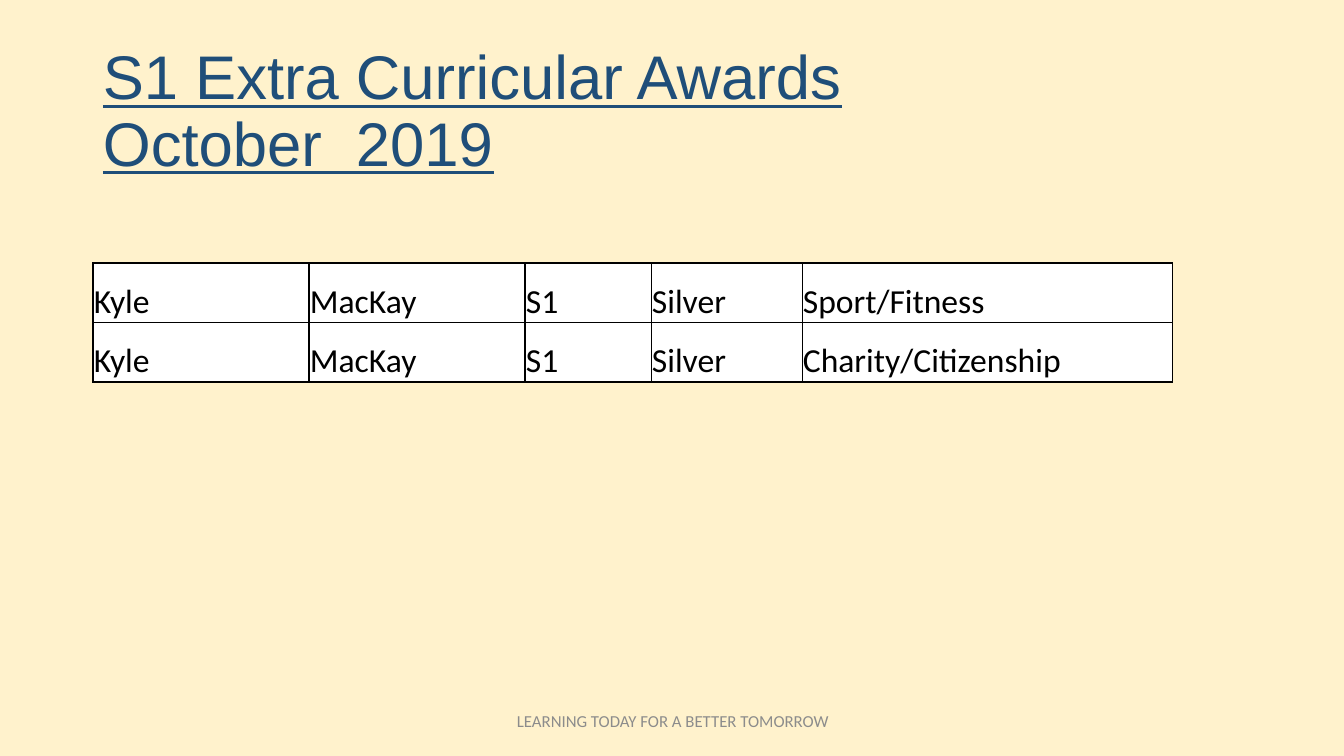
from lxml import etree
from pptx import Presentation, util as u
from pptx.dml.color import RGBColor
from pptx.enum import text
from pptx.oxml import ns

EMU_PER_PX = 914400 / 100.8
ANCHOR = text.MSO_ANCHOR


def px(n):
    """Turn pixels into EMU."""
    return u.Emu(round(n * EMU_PER_PX))


def rgb(value):
    """Turn a hex string into a colour."""
    return RGBColor.from_string(value)


class Deck:
    """Hold the style and the current slide."""

    TITLE = {"name": "Arial", "size": u.Pt(44), "color": "1F4E79", "underline": True}
    FOOTER = {"name": "Calibri", "size": u.Pt(12), "color": "8C8C8C"}
    CELL = {"name": "Calibri", "size": u.Pt(24), "color": "000000"}
    PAPER, BACKGROUND, BORDER = "FFFFFF", "FFF2CC", "000000"

    def __init__(self, width, height):
        """Start a deck with one blank slide."""
        self.prs = Presentation()
        self.prs.slide_width, self.prs.slide_height = px(width), px(height)
        self.s = self.prs.slides.add_slide(self.prs.slide_layouts[6])
        fill = self.s.background.fill
        fill.solid()
        fill.fore_color.rgb = rgb(self.BACKGROUND)

    def run(self, p, words, style):
        """Add a formatted run to a paragraph."""
        r = p.add_run()
        r.text = words
        for key, value in style.items():
            if key == "color":
                r.font.color.rgb = rgb(value)
            else:
                setattr(r.font, key, value)

    def text(self, box, lines, style, **layout):
        """Add a text box with one paragraph of broken lines."""
        tf = self.s.shapes.add_textbox(*map(px, box)).text_frame
        tf.word_wrap, tf.vertical_anchor = True, ANCHOR.MIDDLE
        p = tf.paragraphs[0]
        for key, value in layout.items():
            setattr(p, key, value)
        for i, line in enumerate(lines):
            if i:
                p.add_line_break()
            self.run(p, line, style)

    def border(self, cell):
        """Draw a thin line on each side of a cell."""
        tc_pr = cell._tc.get_or_add_tcPr()
        for side in "LRTB":
            ln = etree.SubElement(tc_pr, ns.qn(f"a:ln{side}"), w=str(u.Pt(1)))
            fill = etree.SubElement(ln, ns.qn("a:solidFill"))
            etree.SubElement(fill, ns.qn("a:srgbClr"), val=self.BORDER)

    def table(self, left, top, height, columns, rows):
        """Add a table from (width, inset) columns and rows of words."""
        width = sum(w for w, _ in columns)
        frame = self.s.shapes.add_table(
            len(rows), len(columns), *map(px, (left, top, width, height)))
        table = frame.table
        table.first_row = table.horz_banding = False
        for column, (w, _) in zip(table.columns, columns):
            column.width = px(w)
        for i, row in enumerate(rows):
            table.rows[i].height = px(height / len(rows))
            for j, words in enumerate(row):
                cell = table.cell(i, j)
                inset = px(columns[j][1])
                layout = {"margin_left": inset, "margin_right": inset,
                          "margin_top": inset, "margin_bottom": 0,
                          "vertical_anchor": ANCHOR.BOTTOM}
                for key, value in layout.items():
                    setattr(cell, key, value)
                self.border(cell)
                cell.fill.solid()
                cell.fill.fore_color.rgb = rgb(self.PAPER)
                self.run(cell.text_frame.paragraphs[0], words, self.CELL)


def main():
    """Build the awards slide."""
    deck = Deck(1344, 756)
    deck.text((93, 40, 1159, 146), ["S1 Extra Curricular Awards", "October  2019"],
              deck.TITLE, line_spacing=0.9)
    deck.text((446, 701, 454, 40), ["LEARNING TODAY FOR A BETTER TOMORROW"],
              deck.FOOTER, alignment=text.PP_ALIGN.CENTER)
    award = ["Kyle", "MacKay", "S1", "Silver"]
    deck.table(93, 263, 119, [(216, 1), (216, 1), (127, 1), (151, 0), (370, 0)],
               [award + [area] for area in ("Sport/Fitness", "Charity/Citizenship")])
    deck.prs.save("out.pptx")


if __name__ == "__main__":
    main()
